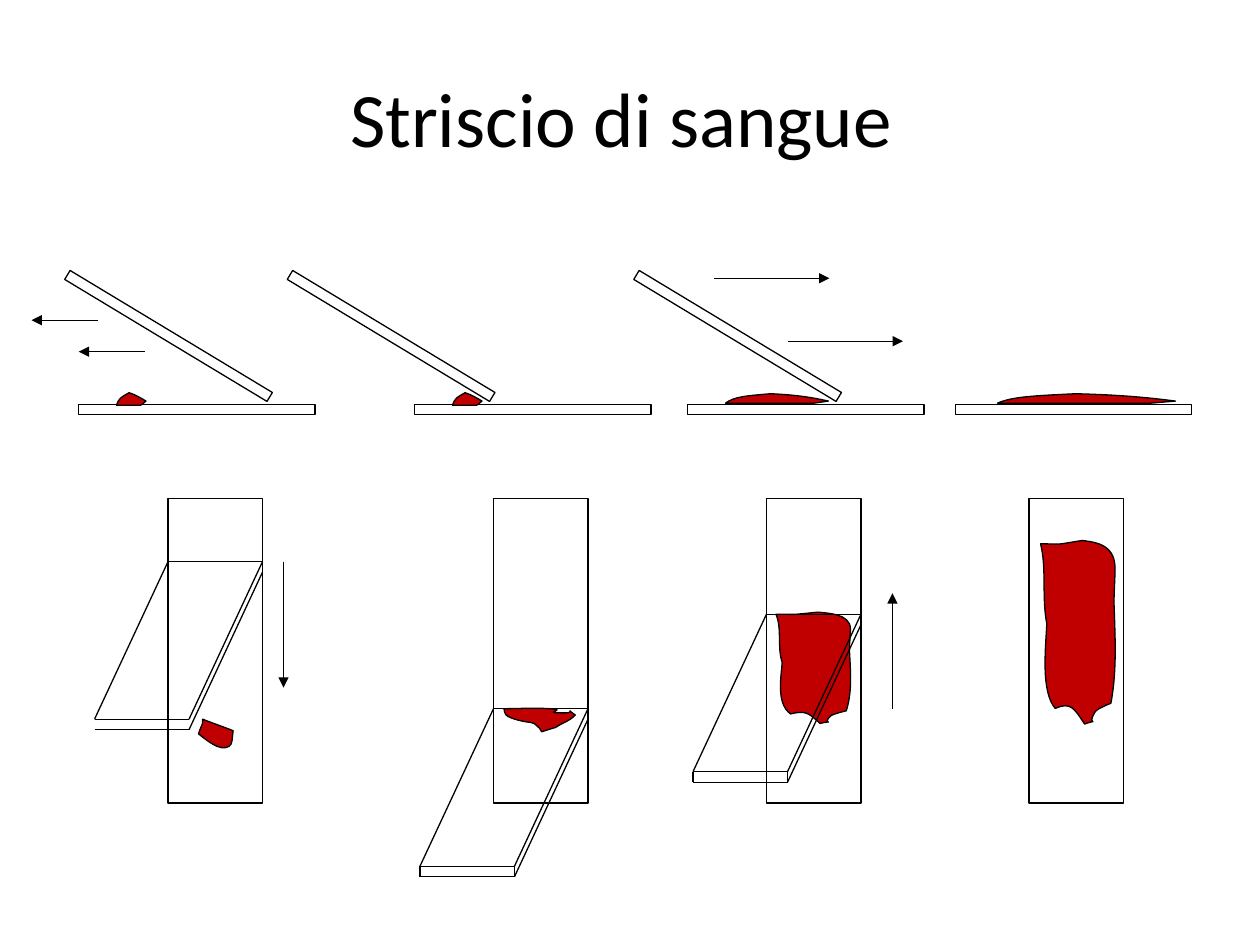
from lxml import etree
from pptx import Presentation
from pptx.dml.color import RGBColor
from pptx.enum.shapes import MSO_CONNECTOR, MSO_SHAPE
from pptx.enum.text import MSO_ANCHOR, PP_ALIGN
from pptx.oxml.ns import qn
from pptx.util import Pt

RECTANGLE = MSO_SHAPE.RECTANGLE
STRAIGHT = MSO_CONNECTOR.STRAIGHT
CENTER = PP_ALIGN.CENTER
MIDDLE = MSO_ANCHOR.MIDDLE

PX = 7620  # 120 px to the inch
BLACK, WHITE, BLOOD = "000000", "FFFFFF", "C00000"
LINE_WIDTH = 0.75

SLIDE_LENGTH, SLIDE_WIDTH, THICKNESS = 225, 90, 10
SIDE_TOP, TILTED_TOP, TILT = 385, 315, 31.1
FRONT_TOP, FRONT_HEIGHT = 475, 290
SLANT, DEPTH = 70, 150

# Outlines start at (0, 0); each row is one cubic curve: two controls and an end.
DROP = [
    ((2, -7), (5, -8), (12, -12)),
    ((18, -10), (23, -7), (28, -4)),
    ((22, 1), (24, 0), (19, 0)),
]
FILM = [
    ((8, -6), (19, -7), (43, -9)),
    ((65, -8), (80, -6), (98, -2)),
    ((77, 1), (88, 0), (68, 0)),
]
FRONT_DROP = [
    ((10, 4), (19, 7), (29, 11)),
    ((28, 16), (29, 24), (25, 26)),
    ((16, 31), (4, 20), (-4, 14)),
    ((0, 2), (0, 7), (0, 0)),
]
SPREAD_DROP = [
    ((1, 2), (0, 5), (2, 6)),
    ((6, 10), (22, 13), (25, 13)),
    ((28, 14), (30, 14), (31, 16)),
    ((34, 17), (34, 20), (36, 22)),
    ((36, 22), (48, 18), (49, 18)),
    ((58, 12), (61, 13), (68, 6)),
    ((56, -2), (70, 4), (58, 4)),
    ((32, 4), (64, 1), (43, 0)),
    ((29, -1), (14, 0), (0, 0)),
]
SMEAR = [
    ((6, 14), (1, 31), (6, 46)),
    ((5, 60), (0, 85), (14, 95)),
    ((29, 91), (32, 95), (42, 104)),
    ((60, 100), (42, 107), (52, 97)),
    ((54, 95), (67, 92), (67, 92)),
    ((73, 73), (71, 53), (70, 34)),
    ((70, 28), (71, 20), (71, 14)),
    ((71, -1), (48, -1), (40, -2)),
    ((10, 1), (23, 0), (0, 0)),
]


def color(hex_string):
    return RGBColor.from_string(hex_string)


def set_text(shape, text, *, size, font, fill, align, anchor):
    frame = shape.text_frame
    frame.word_wrap = True
    frame.vertical_anchor = anchor
    paragraph = frame.paragraphs[0]
    paragraph.alignment = align
    run = paragraph.add_run()
    run.text = text
    run.font.size = Pt(size)
    run.font.name = font
    run.font.color.rgb = color(fill)


def place(shape, left, top, width, height):
    shape.left, shape.top = left * PX, top * PX
    shape.width, shape.height = width * PX, height * PX


def style_shape(shape, fill):
    shape.shadow.inherit = False
    shape.fill.solid()
    shape.fill.fore_color.rgb = color(fill)
    shape.line.color.rgb = color(BLACK)
    shape.line.width = Pt(LINE_WIDTH)


def add_rectangle(slide, left, top, width, height, rotation=0):
    shape = slide.shapes.add_shape(
        RECTANGLE, left * PX, top * PX, width * PX, height * PX)
    shape.rotation = rotation
    style_shape(shape, WHITE)


def add_line(slide, start, end, arrow=False):
    connector = slide.shapes.add_connector(
        STRAIGHT, *(value * PX for value in (*start, *end)))
    connector.line.color.rgb = color(BLACK)
    connector.line.width = Pt(LINE_WIDTH)
    if arrow:
        line = connector.line._get_or_add_ln()
        etree.SubElement(line, qn("a:tailEnd"), type="triangle")
    etree.SubElement(connector._element.spPr, qn("a:effectLst"))


def bend_segments(shape, curve_count):
    """Turn each three straight segments of an outline into one cubic curve."""
    segments = list(shape._element.iter(qn("a:lnTo")))
    for start in range(0, 3 * curve_count, 3):
        first, second, end = segments[start:start + 3]
        curve = etree.Element(qn("a:cubicBezTo"))
        first.addprevious(curve)
        for segment in (first, second, end):
            curve.append(segment[0])
            segment.getparent().remove(segment)


def add_blood(slide, curves, left, top, stretch_x=1, stretch_y=1):
    points = [point for curve in curves for point in curve]
    if points[-1] != (0, 0):
        points.append((0, 0))
    builder = slide.shapes.build_freeform(left * PX, top * PX)
    builder.add_line_segments(
        [(round((left + x * stretch_x) * PX), round((top + y * stretch_y) * PX))
         for x, y in points], close=True)
    shape = builder.convert_to_shape()
    bend_segments(shape, len(curves))
    style_shape(shape, BLOOD)


def add_plate(slide, left, top, closed=True):
    """Draw the slanted spreader seen from the front, by its back left corner."""
    right, front = left + SLIDE_WIDTH, top + DEPTH
    front_left, front_right = left - SLANT, right - SLANT
    bottom = front + THICKNESS
    edges = [
        ((front_left, front), (front_right, front)),
        ((left, top), (right, top)),
        ((right, top), (front_right, front)),
        ((left, top), (front_left, front)),
        ((right, top + THICKNESS), (front_right, bottom)),
        ((front_left, bottom), (front_right, bottom)),
    ]
    if closed:
        edges += [((x, front), (x, bottom)) for x in (front_left, front_right)]
    for start, end in edges:
        add_line(slide, start, end)


def draw_side_views(slide):
    steps = [
        (75, DROP, 111, 386, 1, 48),
        (395, DROP, 431, 386, 1, 260),
        (655, FILM, 691, 384, 1, 590),
        (910, FILM, 950, 384, 1.73, None),
    ]
    for left, curves, blood_left, blood_top, stretch, tilted_left in steps:
        add_rectangle(slide, left, SIDE_TOP, SLIDE_LENGTH, THICKNESS)
        add_blood(slide, curves, blood_left, blood_top, stretch_x=stretch)
        if tilted_left is not None:
            add_rectangle(slide, tilted_left, TILTED_TOP, SLIDE_LENGTH, THICKNESS, TILT)


def draw_front_views(slide):
    steps = [
        (160, FRONT_DROP, 193, 685, 1, 535),
        (470, SPREAD_DROP, 480, 675, 1, 675),
        (730, SMEAR, 739, 585, 1, 585),
        (980, SMEAR, 991, 518, 1.65, None),
    ]
    for left, curves, blood_left, blood_top, stretch, plate_top in steps:
        add_rectangle(slide, left, FRONT_TOP, SLIDE_WIDTH, FRONT_HEIGHT)
        add_blood(slide, curves, blood_left, blood_top, stretch_y=stretch)
        if plate_top is not None:
            add_plate(slide, left, plate_top, closed=curves is not FRONT_DROP)


def main():
    presentation = Presentation()
    presentation.slide_width, presentation.slide_height = 1200 * PX, 900 * PX
    slide = presentation.slides.add_slide(presentation.slide_layouts[5])
    title = slide.shapes.title
    place(title, 60, 36, 1080, 150)
    set_text(title, "Striscio di sangue ", size=44, font="Calibri",
             fill=BLACK, align=CENTER, anchor=MIDDLE)

    draw_side_views(slide)
    draw_front_views(slide)
    arrows = [
        ((138, 335), (75, 335)), ((93, 305), (30, 305)),
        ((680, 265), (790, 265)), ((750, 325), (860, 325)),
        ((270, 535), (270, 655)), ((850, 675), (850, 565)),
    ]
    for start, end in arrows:
        add_line(slide, start, end, arrow=True)
    presentation.save("out.pptx")


if __name__ == "__main__":
    main()
